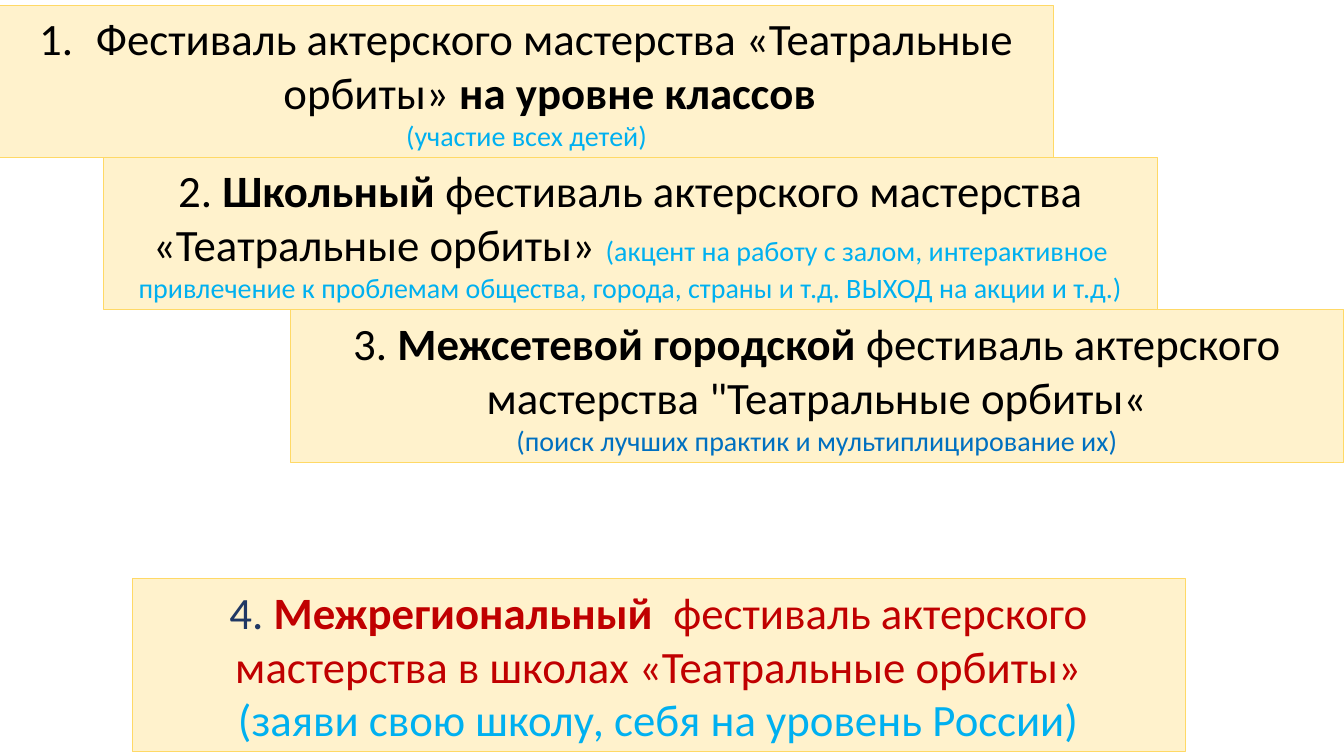
import pptx
import pptx.dml.color
import pptx.enum.shapes
import pptx.enum.text
import pptx.util
from pptx.util import Cm

HUES = {
    "fill": "FFF2CC", "edge": "FFD966", "ink": "000000", "navy": "203864",
    "red": "C00000", "blue": "0070C0", "sky": "00B0F0",
}
WIDE, HIGH, TOP = 26.54, 3.84, 0.13

STEPS = [
    (0, [
        [("Фестиваль актерского мастерства «Театральные орбиты» ", 32, "ink", False),
         ("на уровне классов ", 32, "ink", True)],
        [("(участие всех детей)", 20, "sky", False)],
    ]),
    (2.62, [
        [("2. ", 32, "ink", False), ("Школьный ", 32, "ink", True),
         ("фестиваль актерского мастерства «Театральные орбиты» ", 32, "ink", False),
         ("(акцент на работу с залом, интерактивное привлечение к проблемам "
          "общества, города, страны и т.д. ВЫХОД на акции и т.д.)", 20, "sky", False)],
    ]),
    (7.32, [
        [("3. ", 32, "ink", False), ("Межсетевой городской ", 32, "ink", True),
         ("фестиваль актерского мастерства \"Театральные орбиты«", 32, "ink", False)],
        [("(поиск лучших практик и мультиплицирование их)", 20, "blue", False)],
    ]),
]
FINAL = [
    [("4. ", 32, "navy", False), ("Межрегиональный  ", 32, "red", True),
     ("фестиваль актерского мастерства в школах «Театральные орбиты»", 32, "red", False)],
    [("(заяви свою школу, себя на уровень России)", 32, "sky", False)],
]


def tint(name):
    """Return the named colour."""
    return pptx.dml.color.RGBColor.from_string(HUES[name])


def style(item, form):
    """Set each format value on the item."""
    for key, value in form.items():
        setattr(item, key, value)


def number(para):
    """Give the paragraph an automatic number with a hanging indent."""
    props = para._p.get_or_add_pPr()
    props.set("marL", str(Cm(1.43)))
    props.set("indent", str(-Cm(1.43)))
    mark = pptx.oxml.parse_xml(
        '<a:buAutoNum xmlns:a="http://schemas.openxmlformats.org/drawingml/2006/main"'
        ' type="arabicPeriod"/>')
    props.append(mark)


def panel(slide, box, paras):
    """Draw one festival box with its text and return its frame."""
    shape = slide.shapes.add_shape(
        pptx.enum.shapes.MSO_SHAPE.RECTANGLE, *(Cm(side) for side in box))
    shape.shadow.inherit = False
    shape.fill.solid()
    shape.fill.fore_color.rgb = tint("fill")
    shape.line.color.rgb = tint("edge")
    shape.line.width = pptx.util.Pt(0.75)
    frame = shape.text_frame
    style(frame, {
        "word_wrap": True,
        "auto_size": pptx.enum.text.MSO_AUTO_SIZE.SHAPE_TO_FIT_TEXT,
    })
    for row, runs in enumerate(paras):
        para = frame.add_paragraph() if row else frame.paragraphs[0]
        para.alignment = pptx.enum.text.PP_ALIGN.CENTER
        for text, size, hue, bold in runs:
            run = para.add_run()
            run.text = text
            style(run.font, {"name": "Calibri", "size": pptx.util.Pt(size), "bold": bold})
            run.font.color.rgb = tint(hue)
    return frame


def stairs(slide, top):
    """Stack the first three festivals as steps from the given top."""
    for row, (left, paras) in enumerate(STEPS):
        frame = panel(slide, (left, top + row * HIGH, WIDE, HIGH), paras)
        if row == 0:
            number(frame.paragraphs[0])


def main():
    """Build and save the slide."""
    deck = pptx.Presentation()
    style(deck, {"slide_width": Cm(33.87), "slide_height": Cm(19.05)})
    slide = deck.slides.add_slide(deck.slide_layouts[6])
    stairs(slide, TOP)
    panel(slide, (3.33, 14.58, WIDE, 4.37), FINAL)
    deck.save("out.pptx")


if __name__ == "__main__":
    main()
